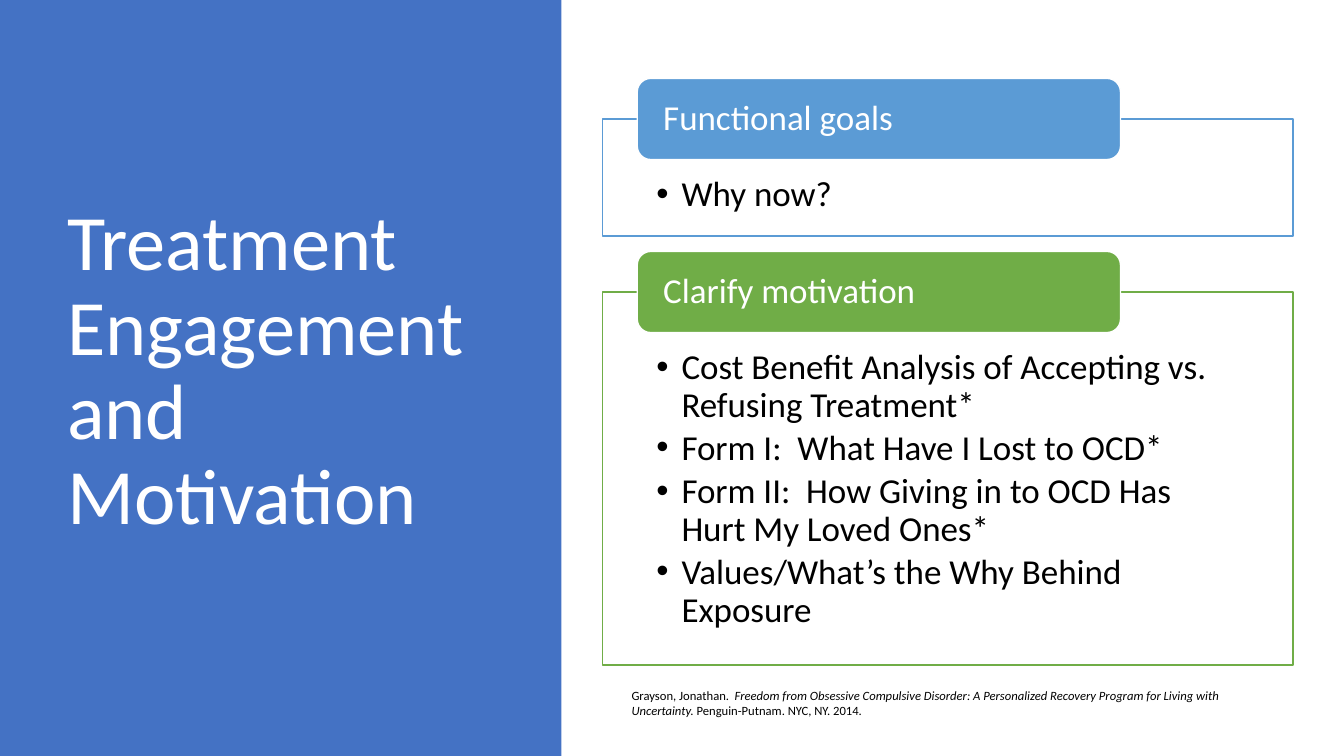
from lxml import etree
from pptx import Presentation
from pptx import util as u
from pptx.dml.color import RGBColor
from pptx.enum import shapes, text
from pptx.oxml.ns import qn

BLUE, SKY, GREEN = "4472C4", "5B9BD5", "70AD47"
WHITE, BLACK = "FFFFFF", "000000"
RECTANGLE = shapes.MSO_SHAPE.RECTANGLE
ROUNDED = shapes.MSO_SHAPE.ROUNDED_RECTANGLE


def color(hex_string):
    return RGBColor.from_string(hex_string)


class SlideBuilder:
    font_name = "Calibri"
    body_size = 25
    line_spacing = 0.9
    bullet_indent = 18

    def __init__(self, slide):
        self.slide = slide

    def box(self, kind, left, top, width, height, fill, line=None):
        shape = self.slide.shapes.add_shape(
            kind, u.Pt(left), u.Pt(top), u.Pt(width), u.Pt(height))
        shape.shadow.inherit = False
        shape.fill.solid()
        shape.fill.fore_color.rgb = color(fill)
        if line:
            shape.line.color.rgb = color(line)
            shape.line.width = u.Pt(1)
        else:
            shape.line.fill.background()
        return shape

    def text_box(self, left, top, width, height):
        return self.slide.shapes.add_textbox(
            u.Pt(left), u.Pt(top), u.Pt(width), u.Pt(height))

    def frame(self, shape, anchor, insets=(7.2, 3.6, 7.2, 3.6)):
        """Prepare the text frame; insets are left, top, right, bottom."""
        frame = shape.text_frame
        frame.word_wrap = True
        frame.vertical_anchor = anchor
        (frame.margin_left, frame.margin_top,
         frame.margin_right, frame.margin_bottom) = map(u.Pt, insets)
        return frame

    def style(self, paragraph, size, fill, spacing=line_spacing):
        paragraph.alignment = text.PP_ALIGN.LEFT
        paragraph.line_spacing = spacing
        for run in paragraph.runs:
            run.font.name = self.font_name
            run.font.size = u.Pt(size)
            run.font.color.rgb = color(fill)

    def bullet(self, paragraph):
        properties = paragraph._p.get_or_add_pPr()
        indent = u.Pt(self.bullet_indent)
        properties.set("marL", str(indent))
        properties.set("indent", str(-indent))
        etree.SubElement(properties, qn("a:buFont")).set("typeface", "Arial")
        etree.SubElement(properties, qn("a:buChar")).set("char", "•")

    def title(self, words, left, top, width, height):
        frame = self.frame(self.text_box(left, top, width, height),
                           text.MSO_ANCHOR.MIDDLE)
        frame.text = words
        self.style(frame.paragraphs[0], 56, WHITE)

    def section(self, heading, items, top, height, accent):
        """Outlined panel of bullets with a heading tab across its top edge."""
        left, width, tab_height = 430.5, 493.2, 58
        panel = self.box(RECTANGLE, left, top, width, height, WHITE, accent)
        frame = self.frame(panel, text.MSO_ANCHOR.TOP, (38.3, 41, 38.3, 13.7))
        frame.text = "\n".join(items)
        for paragraph in frame.paragraphs:
            self.bullet(paragraph)
            self.style(paragraph, self.body_size, BLACK)
            paragraph.space_after = u.Pt(0.15 * self.body_size)

        tab = self.box(ROUNDED, left + width / 20, top - tab_height / 2,
                       0.7 * width, tab_height, accent, WHITE)
        frame = self.frame(tab, text.MSO_ANCHOR.MIDDLE, (15.8, 0, 15.8, 0))
        frame.text = heading
        self.style(frame.paragraphs[0], self.body_size, WHITE)

    def citation(self, parts, left, top, width, height):
        """Small text made of (words, italic) parts."""
        frame = self.frame(self.text_box(left, top, width, height),
                           text.MSO_ANCHOR.TOP)
        paragraph = frame.paragraphs[0]
        for words, italic in parts:
            run = paragraph.add_run()
            run.text = words
            run.font.italic = italic
        self.style(paragraph, 9, BLACK, 1.0)


def main():
    presentation = Presentation()
    presentation.slide_width = u.Pt(960)
    presentation.slide_height = u.Pt(540)
    slide = presentation.slides.add_slide(presentation.slide_layouts[6])
    builder = SlideBuilder(slide)

    builder.box(RECTANGLE, 0, 0, 401, 540, BLUE)
    builder.title("Treatment Engagement and Motivation", 41, 49, 299.5, 433.5)
    builder.section("Functional goals", ["Why now?"], 85, 83.7, SKY)
    builder.section("Clarify motivation", [
        "Cost Benefit Analysis of Accepting vs. Refusing Treatment*",
        "Form I:  What Have I Lost to OCD*",
        "Form II:  How Giving in to OCD Has Hurt My Loved Ones*",
        "Values/What’s the Why Behind Exposure",
    ], 208.6, 266.4, GREEN)
    builder.citation([
        ("Grayson, Jonathan.  ", False),
        ("Freedom from Obsessive Compulsive Disorder: A Personalized "
         "Recovery Program for Living with Uncertainty. ", True),
        ("Penguin-Putnam. NYC, NY. 2014.", False),
    ], 444, 488, 461.5, 51)

    presentation.save("out.pptx")


if __name__ == "__main__":
    main()
